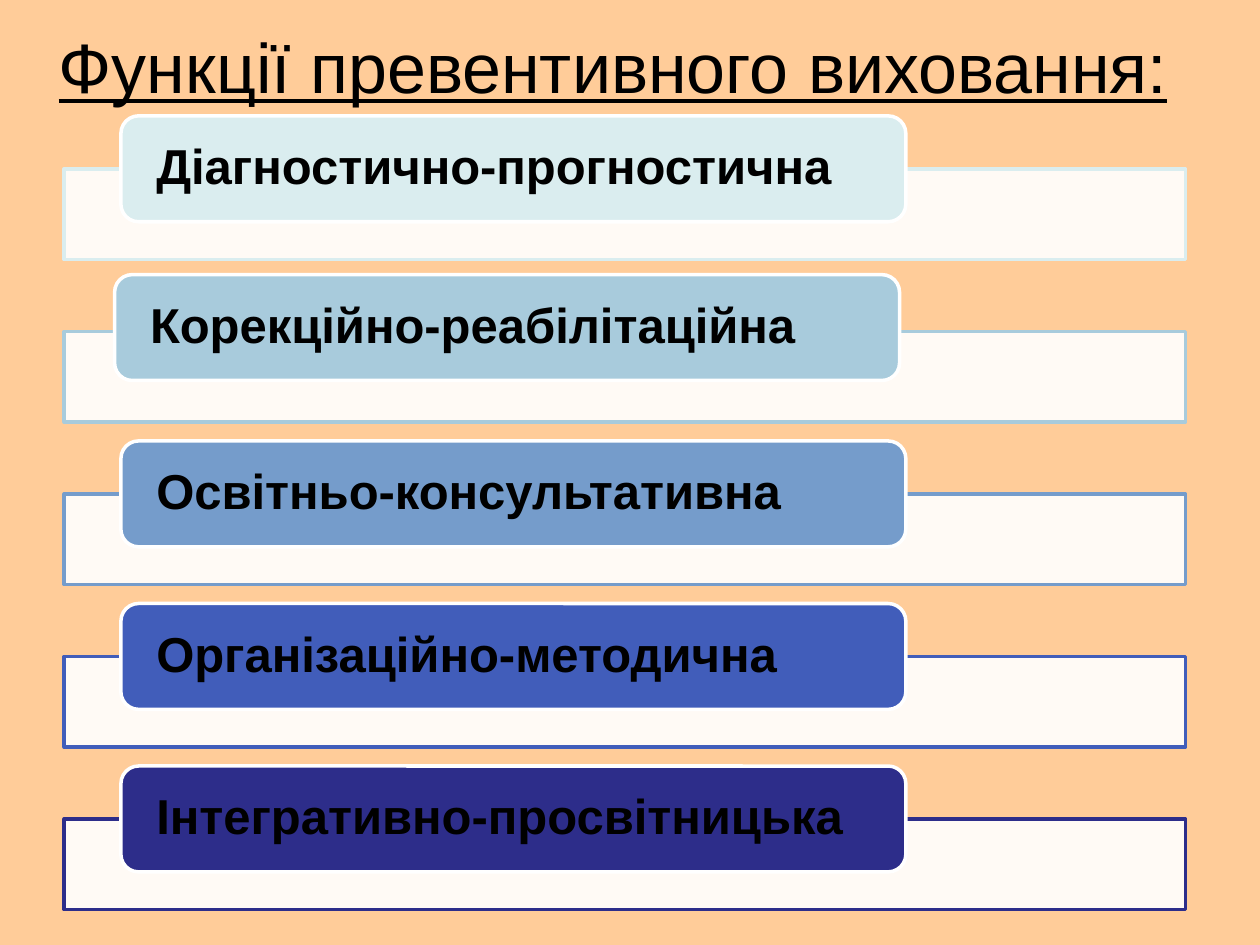
from lxml import etree
from pptx import Presentation
from pptx.dml.color import RGBColor
from pptx.enum import shapes, text
from pptx.oxml.ns import qn
from pptx.util import Inches, Pt

COLORS = {
    "background": "FFCC99",
    "white": "FFFFFF",
    "ink": "000000",
    "mint": "DAEDEF",
    "sky": "A8CBDC",
    "steel": "759CCB",
    "royal": "415DBA",
    "navy": "2D2D8A",
}
HEADING = "Функції превентивного виховання:"
FUNCTIONS = [
    ("Діагностично-прогностична", "mint", 0.96, 0.92),
    ("Корекційно-реабілітаційна", "sky", 0.91, 2.18),
    ("Освітньо-консультативна", "steel", 0.96, 3.5),
    ("Організаційно-методична", "royal", 0.96, 4.79),
    ("Інтегративно-просвітницька", "navy", 0.96, 6.08),
]
BAR_LEFT, BAR_TOP, BAR_WIDTH, BAR_HEIGHT, BAR_STEP = 0.51, 1.34, 8.9, 0.72, 1.29
LABEL_WIDTH, LABEL_HEIGHT = 6.23, 0.84


def color(name):
    return RGBColor.from_string(COLORS[name])


def write(holder, words, size, align, bold=False, underline=False,
          side=0.1, spacing=1.0):
    frame = holder.text_frame
    frame.word_wrap = True
    frame.vertical_anchor = text.MSO_ANCHOR.MIDDLE
    frame.margin_left = frame.margin_right = Inches(side)
    frame.margin_top = frame.margin_bottom = 0
    line = frame.paragraphs[0]
    line.alignment = align
    line.line_spacing = spacing
    run = line.add_run()
    run.text = words
    run.font.name = "Arial"
    run.font.size = Pt(size)
    run.font.bold = bold
    run.font.underline = underline
    run.font.color.rgb = color("ink")


def add_box(slide, preset, place, fill, outline, opacity=100):
    box = slide.shapes.add_shape(preset, *map(Inches, place))
    box.shadow.inherit = False
    box.fill.solid()
    box.fill.fore_color.rgb = color(fill)
    box.line.color.rgb = color(outline)
    box.line.width = Pt(2)
    if opacity < 100:
        tint = box.fill._xPr.find(qn("a:solidFill"))[0]
        etree.SubElement(tint, qn("a:alpha"), val=str(opacity * 1000))
    return box


def main():
    deck = Presentation()
    deck.slide_width, deck.slide_height = Inches(10), Inches(7.5)
    slide = deck.slides.add_slide(deck.slide_layouts[6])
    slide.background.fill.solid()
    slide.background.fill.fore_color.rgb = color("background")

    heading = slide.shapes.add_textbox(*map(Inches, (0, 0.21, 9.73, 0.62)))
    write(heading, HEADING, 40, text.PP_ALIGN.CENTER, underline=True)

    for row, (name, shade, left, top) in enumerate(FUNCTIONS):
        bar_place = (BAR_LEFT, BAR_TOP + row * BAR_STEP, BAR_WIDTH, BAR_HEIGHT)
        add_box(slide, shapes.MSO_SHAPE.RECTANGLE, bar_place, "white", shade, opacity=90)
        label = add_box(slide, shapes.MSO_SHAPE.ROUNDED_RECTANGLE,
                        (left, top, LABEL_WIDTH, LABEL_HEIGHT), shade, "white")
        write(label, name, 28, text.PP_ALIGN.LEFT, bold=True, side=0.24, spacing=0.9)

    deck.save("out.pptx")


if __name__ == "__main__":
    main()
